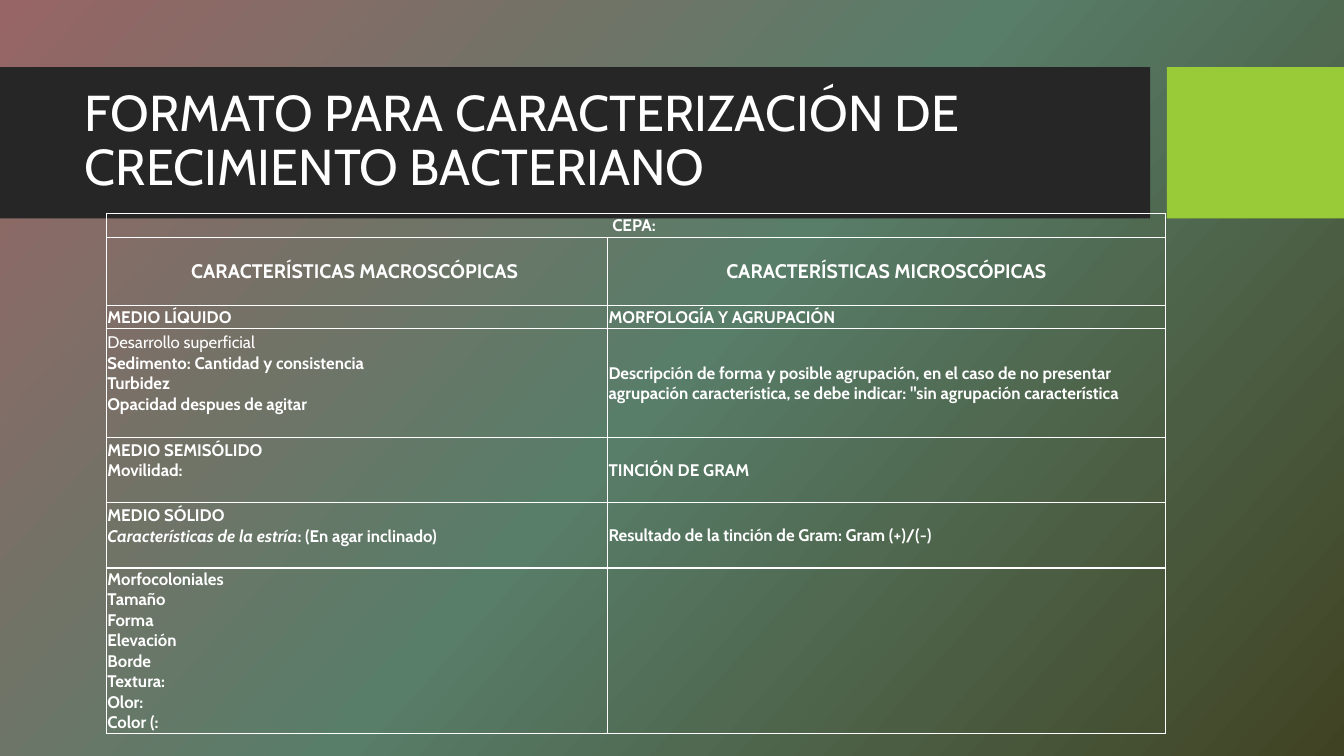
"""Build the slide with the form for describing bacterial growth."""
import copy
from dataclasses import dataclass

import pptx
import pptx.dml.color
import pptx.enum.shapes
import pptx.enum.text
import pptx.oxml
import pptx.oxml.ns
import pptx.slide
import pptx.table
import pptx.text.text
import pptx.util

Pt = pptx.util.Pt
Align = pptx.enum.text.PP_ALIGN
Anchor = pptx.enum.text.MSO_ANCHOR


@dataclass(frozen=True)
class Theme:
    font: str = "Cabin"
    white: str = "FFFFFF"
    dark: str = "262626"
    lime: str = "99CB38"
    wash: tuple[str, ...] = ("976565", "587D69", "404323")
    angle: int = 318
    title: int = 36
    head: int = 14
    body: int = 12


@dataclass(frozen=True)
class Bar:
    left: float
    width: float
    color: str


@dataclass(frozen=True)
class Line:
    text: str
    bold: bool = True
    lead: str = ""


@dataclass(frozen=True)
class Entry:
    lines: tuple[Line, ...]
    size: int
    align: Align = Align.LEFT
    foot: float = 0


@dataclass(frozen=True)
class Row:
    height: float
    cells: tuple[Entry, ...]


THEME = Theme()
BAR_TOP, BAR_HEIGHT = 48, 108
BARS = (Bar(0, 821.5, THEME.dark), Bar(833.5, 126.5, THEME.lime))
WIDTHS = (358, 398.5)


def head(text: str, size: int = THEME.head) -> Entry:
    """Return a centred heading."""
    return Entry((Line(text),), size, Align.CENTER)


def body(*lines: str | Line, foot: float = 0) -> Entry:
    """Return a left-aligned entry with one paragraph per line."""
    items = tuple(Line(item) if isinstance(item, str) else item for item in lines)
    return Entry(items, THEME.body, foot=foot)


ROWS = (
    Row(17.2, (head("CEPA: ", THEME.body),)),
    Row(48.4, (head("CARACTERÍSTICAS MACROSCÓPICAS "), head("CARACTERÍSTICAS MICROSCÓPICAS"))),
    Row(16.6, (body("MEDIO LÍQUIDO"), body("MORFOLOGÍA Y AGRUPACIÓN"))),
    Row(77.8, (
        body(Line("Desarrollo superficial", bold=False), "Sedimento: Cantidad y consistencia",
             "Turbidez", "Opacidad despues de agitar", foot=14),
        body("Descripción de forma y posible agrupación, en el caso de no presentar agrupación "
             "característica, se debe indicar: \"sin agrupación característica"))),
    Row(46.6, (body("MEDIO SEMISÓLIDO", "Movilidad:", foot=14), body("TINCIÓN DE GRAM"))),
    Row(46.8, (
        body("MEDIO SÓLIDO",
             Line(": (En agar inclinado)", lead="Características de la estría"), foot=14),
        body("Resultado de la tinción de Gram: Gram (+)/(-)"))),
    Row(117.8, (
        body("Morfocoloniales", "Tamaño", "Forma", "Elevación", "Borde", "Textura:", "Olor:",
             "Color (:"),
        body(""))),
)


def tint(color: str) -> pptx.dml.color.RGBColor:
    """Return the colour for a hex string."""
    return pptx.dml.color.RGBColor.from_string(color)


def style(para: pptx.text.text._Paragraph, size: int, bold: bool) -> None:
    """Set the font of a paragraph."""
    font = para.font
    font.name, font.size, font.bold = THEME.font, Pt(size), bold
    font.color.rgb = tint(THEME.white)


def paint(slide: pptx.slide.Slide) -> None:
    """Fill the background with a gradient of three colours."""
    slide.background.fill.gradient()
    first = next(slide.element.iter(pptx.oxml.ns.qn("a:gs")))
    first.addnext(copy.deepcopy(first))
    fill = slide.background.fill
    fill.gradient_angle = THEME.angle
    for rank, (stop, color) in enumerate(zip(fill.gradient_stops, THEME.wash)):
        stop.position = rank / 2
        stop.color.rgb = tint(color)


def add_title(slide: pptx.slide.Slide) -> None:
    """Place the title on its two bars."""
    title = slide.shapes.title
    title.left, title.top, title.width, title.height = Pt(53.3), Pt(59), Pt(756.7), Pt(85)
    frame = title.text_frame
    frame.auto_size = pptx.enum.text.MSO_AUTO_SIZE.NONE
    frame.word_wrap = True
    frame.vertical_anchor = Anchor.MIDDLE
    para = frame.paragraphs[0]
    para.text = "FORMATO PARA CARACTERIZACIÓN DE CRECIMIENTO BACTERIANO"
    para.alignment, para.line_spacing = Align.LEFT, 0.9
    style(para, THEME.title, False)
    for bar in BARS:
        shape = slide.shapes.add_shape(
            pptx.enum.shapes.MSO_SHAPE.RECTANGLE,
            Pt(bar.left), Pt(BAR_TOP), Pt(bar.width), Pt(BAR_HEIGHT))
        shape.shadow.inherit = False
        shape.fill.solid()
        shape.fill.fore_color.rgb = tint(bar.color)
        shape.line.fill.background()
        title.element.addprevious(shape.element)


def frame_cell(cell: pptx.table._Cell) -> None:
    """Clear the fill of a cell and rule its four sides."""
    cell.fill.background()
    props = cell._tc.get_or_add_tcPr()
    for rank, side in enumerate(("lnL", "lnR", "lnT", "lnB")):
        props.insert(rank, pptx.oxml.parse_xml(
            f'<a:{side} {pptx.oxml.ns.nsdecls("a")} w="{Pt(1)}"><a:solidFill>'
            f'<a:srgbClr val="{THEME.white}"/></a:solidFill></a:{side}>'))


def write(cell: pptx.table._Cell, entry: Entry) -> None:
    """Write an entry into a cell."""
    cell.vertical_anchor = Anchor.MIDDLE
    cell.margin_left = cell.margin_right = cell.margin_top = Pt(0.7)
    cell.margin_bottom = Pt(entry.foot)
    frame = cell.text_frame
    for rank, line in enumerate(entry.lines):
        para = frame.add_paragraph() if rank else frame.paragraphs[0]
        para.alignment = entry.align
        style(para, entry.size, line.bold)
        if line.lead:
            lead = para.add_run()
            lead.text, lead.font.italic = line.lead, True
        if line.text:
            para.add_run().text = line.text


def add_form(slide: pptx.slide.Slide) -> None:
    """Add the form as a table."""
    table = slide.shapes.add_table(
        len(ROWS), len(WIDTHS), Pt(76), Pt(152.4), Pt(sum(WIDTHS)),
        Pt(sum(row.height for row in ROWS))).table
    table.first_row = table.horz_banding = False
    for column, width in zip(table.columns, WIDTHS):
        column.width = Pt(width)
    for cell in table.iter_cells():
        frame_cell(cell)
    table.cell(0, 0).merge(table.cell(0, 1))
    for rank, row in enumerate(ROWS):
        table.rows[rank].height = Pt(row.height)
        for place, entry in enumerate(row.cells):
            write(table.cell(rank, place), entry)


def main() -> None:
    """Build and save the deck."""
    deck = pptx.Presentation()
    deck.slide_width, deck.slide_height = Pt(960), Pt(540)
    slide = deck.slides.add_slide(deck.slide_layouts.get_by_name("Title Only"))
    paint(slide)
    add_title(slide)
    add_form(slide)
    deck.save("out.pptx")


if __name__ == "__main__":
    main()
